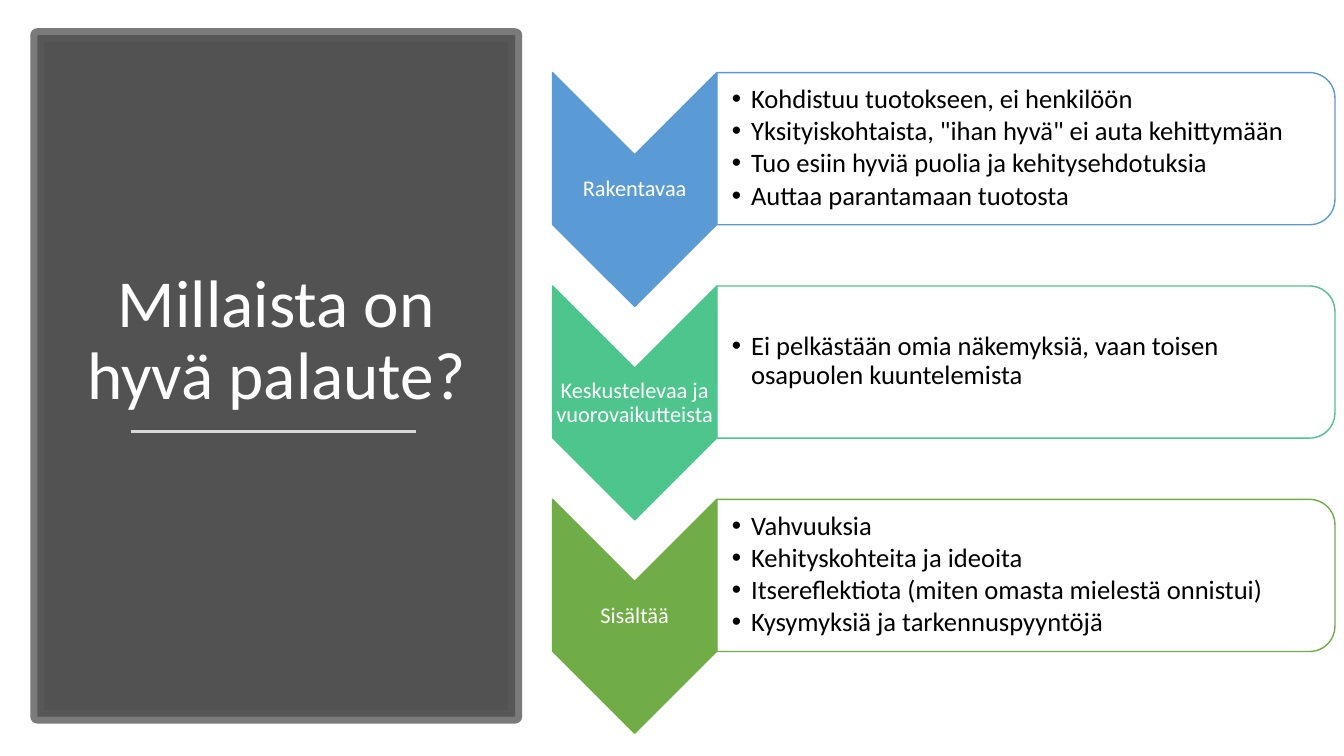
from lxml import etree
from pptx import Presentation
from pptx.dml.color import RGBColor
from pptx.enum.shapes import MSO_CONNECTOR, MSO_SHAPE
from pptx.enum.text import MSO_ANCHOR, PP_ALIGN
from pptx.oxml.ns import qn
from pptx.util import Inches, Pt

RECT = MSO_SHAPE.RECTANGLE
CHEVRON = MSO_SHAPE.CHEVRON
ROUND = MSO_SHAPE.ROUND_2_SAME_RECTANGLE
STRAIGHT = MSO_CONNECTOR.STRAIGHT
CENTER, LEFT = PP_ALIGN.CENTER, PP_ALIGN.LEFT
MIDDLE, BOTTOM = MSO_ANCHOR.MIDDLE, MSO_ANCHOR.BOTTOM

TOPICS = [
    ("Rakentavaa", "5B9BD5", [
        "Kohdistuu tuotokseen, ei henkilöön",
        "Yksityiskohtaista, \"ihan hyvä\" ei auta kehittymään",
        "Tuo esiin hyviä puolia ja kehitysehdotuksia",
        "Auttaa parantamaan tuotosta"]),
    ("Keskustelevaa ja vuorovaikutteista", "4DC58D", [
        "Ei pelkästään omia näkemyksiä, vaan toisen osapuolen kuuntelemista"]),
    ("Sisältää", "70AD47", [
        "Vahvuuksia",
        "Kehityskohteita ja ideoita",
        "Itsereflektiota (miten omasta mielestä onnistui)",
        "Kysymyksiä ja tarkennuspyyntöjä"]),
]
TOP, STEP = 0.72, 2.117


def color(code):
    return RGBColor.from_string(code)


class Deck:
    font = "Calibri"
    white, black = "FFFFFF", "000000"

    def __init__(self):
        self.prs = Presentation()
        self.prs.slide_width = Inches(13.33)
        self.prs.slide_height = Inches(7.5)
        self.slide = self.prs.slides.add_slide(self.prs.slide_layouts[5])

    def shape(self, kind, box, fill, line, width=1, alphas=(), turn=False):
        """Draw a shape in its visible box; turn rotates it by 90 degrees."""
        x, y, w, h = box
        if turn:
            x, y, w, h = x + (w - h) / 2, y + (h - w) / 2, h, w
        item = self.slide.shapes.add_shape(kind, *map(Inches, (x, y, w, h)))
        item.rotation = 90 if turn else 0
        item.shadow.inherit = False
        item.fill.solid()
        item.fill.fore_color.rgb = color(fill)
        item.line.color.rgb = color(line)
        item.line.width = Pt(width)
        # The fill colour comes first, then the line colour
        for node, alpha in zip(item._element.xpath("./p:spPr//a:srgbClr"), alphas):
            etree.SubElement(node, qn("a:alpha"), val=str(alpha * 1000))

    def style(self, frame, size, code, align, after=0):
        frame.word_wrap = True
        for par in frame.paragraphs:
            par.alignment = align
            par.line_spacing = 0.9
            par.space_before = Pt(0)
            par.space_after = Pt(after)
            for run in par.runs:
                run.font.name = self.font
                run.font.size = Pt(size)
                run.font.color.rgb = color(code)

    def title(self, text, box):
        item = self.slide.shapes.title
        item.left, item.top, item.width, item.height = map(Inches, box)
        frame = item.text_frame
        frame.text = text
        frame.vertical_anchor = BOTTOM
        self.style(frame, 48, self.white, CENTER)

    def text(self, lines, box, inset=0.01):
        frame = self.slide.shapes.add_textbox(*map(Inches, box)).text_frame
        frame.text = "\n".join(lines)
        frame.vertical_anchor = MIDDLE
        frame.margin_left = Inches(inset)
        frame.margin_right = frame.margin_top = frame.margin_bottom = Inches(0.01)
        return frame

    def label(self, text, box):
        self.style(self.text([text], box), 16, self.white, CENTER)

    def bullets(self, lines, box):
        frame = self.text(lines, box, 0.15)
        self.style(frame, 19, self.black, LEFT, 2.5)
        for par in frame.paragraphs:
            par.level = 1
            props = par._p.get_or_add_pPr()
            props.set("marL", str(Inches(0.19)))
            props.set("indent", str(-Inches(0.19)))
            etree.SubElement(props, qn("a:buFont"), typeface="Arial")
            etree.SubElement(props, qn("a:buChar"), char="•")

    def rule(self, x, y, end, code, width):
        line = self.slide.shapes.add_connector(
            STRAIGHT, Inches(x), Inches(y), Inches(end), Inches(y))
        line.line.color.rgb = color(code)
        line.line.width = Pt(width)
        etree.SubElement(line._element.spPr, qn("a:effectLst"))

    def topic(self, y, name, code, lines):
        self.shape(CHEVRON, (5.48, y, 1.63, 2.32), code, code, turn=True)
        self.label(name, (5.48, y + 0.81, 1.63, 0.7))
        self.shape(ROUND, (7.11, y, 6.13, 1.51), self.white, code,
                   alphas=(90,), turn=True)
        self.bullets(lines, (7.11, y + 0.07, 6.06, 1.36))


def main():
    deck = Deck()
    deck.shape(RECT, (0.37, 0.35, 4.74, 6.76), "404040", "595959", 10, (90, 80))
    # Bring the title in front of the dark panel
    tree = deck.slide.shapes
    tree._spTree.append(tree.title._element)
    deck.title("Millaista on hyvä palaute?", (0.74, 1, 4, 3.16))
    deck.rule(1.3, 4.28, 4.13, "D9D9D9", 1.75)
    for i, (name, code, lines) in enumerate(TOPICS):
        deck.topic(TOP + i * STEP, name, code, lines)
    deck.prs.save("out.pptx")


if __name__ == "__main__":
    main()
